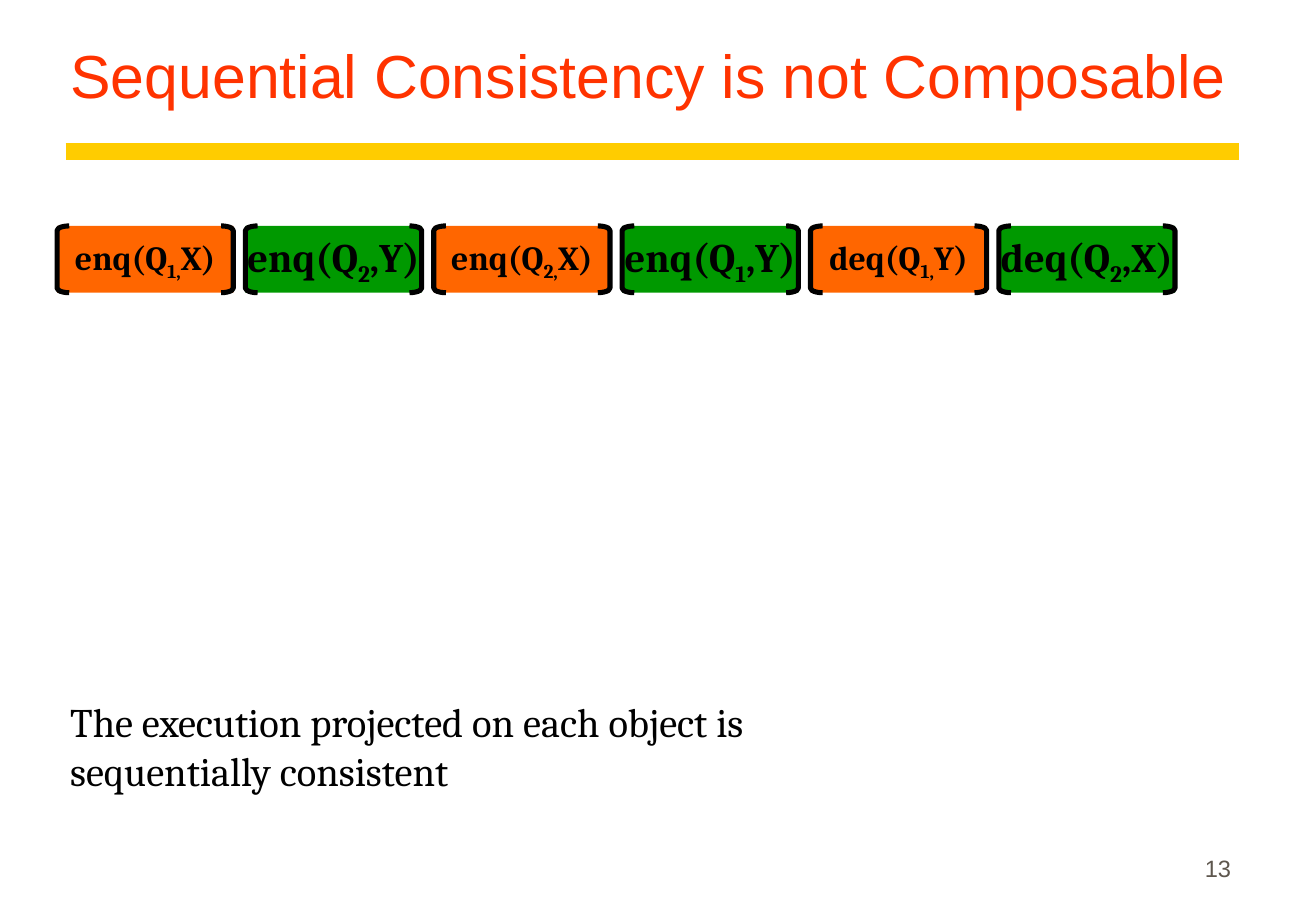
import pptx
import pptx.util
import pptx.dml.color
import pptx.enum.shapes
import pptx.enum.text
import lxml.etree

In, Pt = pptx.util.Inches, pptx.util.Pt
Kind = pptx.enum.shapes.MSO_SHAPE
Align = pptx.enum.text.PP_ALIGN
Anchor = pptx.enum.text.MSO_ANCHOR

# Content
TITLE = "Sequential Consistency is not Composable"
NOTE = "The execution projected on each object is \vsequentially consistent"
NUMBER = "13"
ORANGE, GREEN, BLACK = "FF6600", "009900", "000000"
CALLS = [  # start, subscript, end, fill, size
    ("enq(Q", "1,", "X)", ORANGE, 20),
    ("enq(Q", "2", ",Y)", GREEN, 24),
    ("enq(Q", "2,", "X)", ORANGE, 20),
    ("enq(Q", "1", ",Y)", GREEN, 24),
    ("deq(Q", "1,", "Y)", ORANGE, 20),
    ("deq(Q", "2", ",X)", GREEN, 24),
]

# Grid, in inches
WIDE, HIGH = 10.83, 7.5
LEFT, TOP, STEP = 0.47, 1.86, 1.55
BOX_W, BOX_H, EDGE = 1.45, 0.55, 0.1


def color(code):
    return pptx.dml.color.RGBColor.from_string(code)


def style(para, face, size, code, bold=False):
    font = para.font
    font.name, font.size, font.bold = face, Pt(size), bold
    font.color.rgb = color(code)


def label(x, y, w, h, text, size, face, code):
    frame = slide.shapes.add_textbox(In(x), In(y), In(w), In(h)).text_frame
    frame.word_wrap = True
    frame.text = text
    style(frame.paragraphs[0], face, size, code)
    return frame


def shape(kind, x, w):
    part = slide.shapes.add_shape(kind, In(x), In(TOP), In(w), In(BOX_H))
    part.shadow.inherit = False
    return part


def bracket(kind, x):
    part = shape(kind, x, EDGE)
    part.adjustments[0] = 0.375
    part.fill.background()
    part.line.color.rgb = color(BLACK)
    part.line.width = Pt(3)


def call(x, start, sub, end, fill, size):
    box = shape(Kind.RECTANGLE, x, BOX_W)
    box.fill.solid()
    box.fill.fore_color.rgb = color(fill)
    box.line.fill.background()
    frame = box.text_frame
    frame.word_wrap = False
    frame.vertical_anchor = Anchor.MIDDLE
    para = frame.paragraphs[0]
    para.alignment = Align.CENTER
    style(para, "Cambria", size, BLACK, True)
    for text in (start, sub, end):
        run = para.add_run()
        run.text = text
        if text == sub:
            run._r.get_or_add_rPr().set("baseline", "-25000")
    bracket(Kind.LEFT_BRACKET, x)
    bracket(Kind.RIGHT_BRACKET, x + BOX_W - EDGE)


deck = pptx.Presentation()
deck.slide_width, deck.slide_height = In(WIDE), In(HIGH)
slide = deck.slides.add_slide(deck.slide_layouts[5])

# Title
title = slide.shapes.title
title.left, title.top, title.width, title.height = In(0.48), In(0.25), In(9.72), In(0.8)
frame = title.text_frame
frame.text = TITLE
frame.auto_size = pptx.enum.text.MSO_AUTO_SIZE.NONE
frame.vertical_anchor = Anchor.MIDDLE
para = frame.paragraphs[0]
para.alignment, para.line_spacing = Align.LEFT, 0.9
style(para, "Arial", 36, "FF3300")

# Rule under the title
rule = slide.shapes.add_connector(
    pptx.enum.shapes.MSO_CONNECTOR.STRAIGHT, In(0.54), In(1.25), In(10.2), In(1.25))
rule.line.color.rgb = color("FFCC00")
rule.line.width = Pt(10)
lxml.etree.SubElement(rule._element.spPr, pptx.oxml.ns.qn("a:effectLst"))

# Row of calls
for col, parts in enumerate(CALLS):
    call(LEFT + col * STEP, *parts)

# Note and slide number
label(0.48, 5.69, 5.87, 0.91, NOTE, 24, "Cambria", BLACK)
frame = label(9.03, 7, 1.2, 0.31, NUMBER, 14, "Arial", "5E574E")
frame.vertical_anchor = Anchor.BOTTOM
frame.paragraphs[0].alignment = Align.RIGHT

deck.save("out.pptx")
